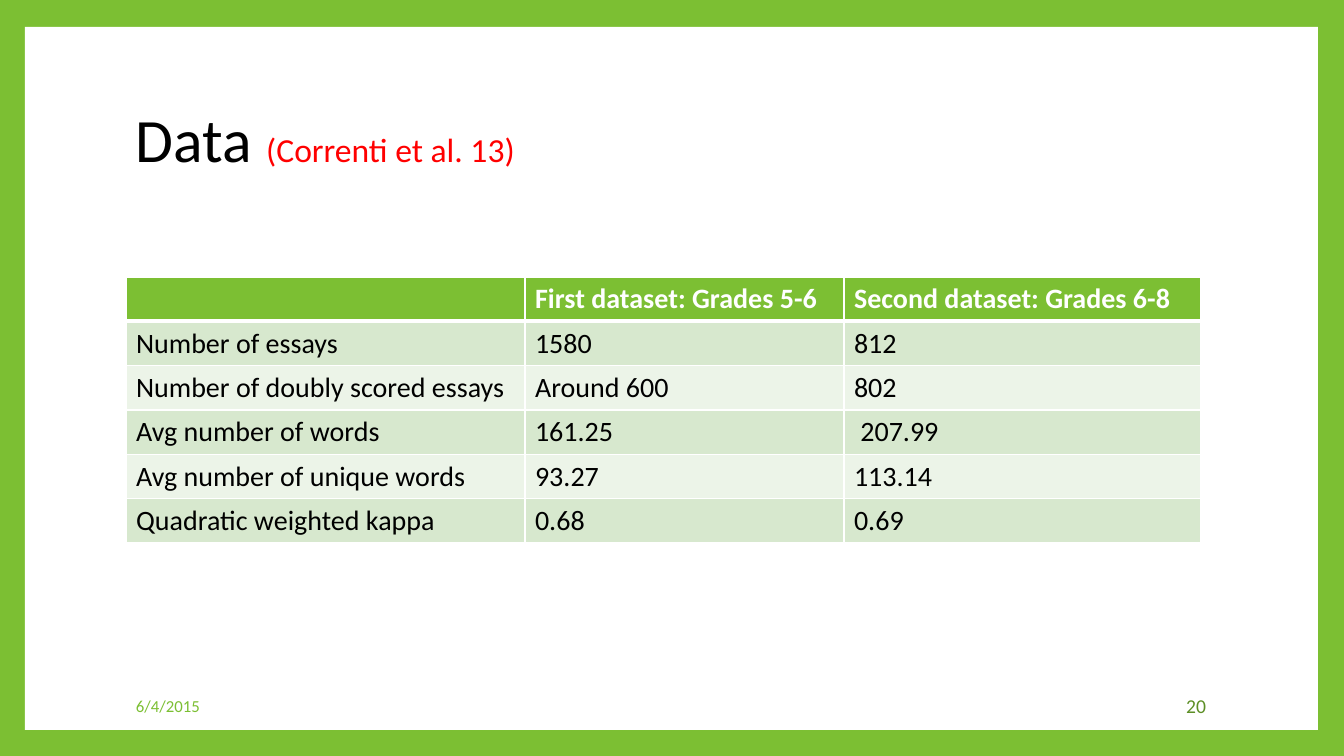
from dataclasses import dataclass

from lxml import etree
from pptx import Presentation
from pptx.dml.color import RGBColor
from pptx.enum.shapes import MSO_SHAPE
from pptx.enum.text import MSO_ANCHOR, PP_ALIGN
from pptx.oxml.ns import qn
from pptx.util import Emu, Pt

RECTANGLE = MSO_SHAPE.RECTANGLE
MIDDLE = MSO_ANCHOR.MIDDLE
LEFT, RIGHT = PP_ALIGN.LEFT, PP_ALIGN.RIGHT
EMU_PER_PX = 914400 / 100.8


@dataclass(frozen=True)
class Theme:
    font: str = "Calibri"
    green: str = "7CBF33"
    dark_green: str = "5D8F26"
    band_dark: str = "D7E8CE"
    band_light: str = "ECF4E8"
    white: str = "FFFFFF"
    black: str = "000000"
    red: str = "FF0000"
    title_size: int = 44
    citation_size: int = 24
    table_size: int = 20
    date_size: int = 12
    number_size: int = 14
    thin_rule: int = 1
    thick_rule: int = 3


THEME = Theme()

DATASETS = [
    ["", "First dataset: Grades 5-6", "Second dataset: Grades 6-8"],
    ["Number of essays", "1580", "812"],
    ["Number of doubly scored essays", "Around 600", "802"],
    ["Avg number of words", "161.25", " 207.99"],
    ["Avg number of unique words", "93.27", "113.14"],
    ["Quadratic weighted kappa", "0.68", "0.69"],
]
COLUMN_WIDTHS = [399, 319, 357]


def px(length):
    return Emu(round(length * EMU_PER_PX))


def rgb(value):
    return RGBColor.from_string(value)


def style(font, size, color, bold=False):
    font.name = THEME.font
    font.size = Pt(size)
    font.color.rgb = rgb(color)
    font.bold = bold


def add_text(slide, box, align=LEFT):
    """Add a vertically centred text box and return its paragraph."""
    frame = slide.shapes.add_textbox(*map(px, box)).text_frame
    frame.word_wrap = True
    frame.vertical_anchor = MIDDLE
    paragraph = frame.paragraphs[0]
    paragraph.alignment = align
    return paragraph


def add_frame(slide, box):
    """White panel on a green background."""
    background = slide.background.fill
    background.solid()
    background.fore_color.rgb = rgb(THEME.green)
    panel = slide.shapes.add_shape(RECTANGLE, *map(px, box))
    panel.shadow.inherit = False
    panel.fill.solid()
    panel.fill.fore_color.rgb = rgb(THEME.white)
    panel.line.fill.background()


def add_title(slide, box):
    title = add_text(slide, box)
    title.line_spacing = 0.9
    for words, size, color in (
        ("Data ", THEME.title_size, THEME.black),
        ("(Correnti et al. 13)", THEME.citation_size, THEME.red),
    ):
        run = title.add_run()
        run.text = words
        style(run.font, size, color)


def set_borders(cell, top, bottom):
    """White rules on all four sides, placed ahead of the cell's fill."""
    properties = cell._tc.get_or_add_tcPr()
    widths = {"lnL": THEME.thin_rule, "lnR": THEME.thin_rule, "lnT": top, "lnB": bottom}
    for position, (side, width) in enumerate(widths.items()):
        rule = etree.Element(qn(f"a:{side}"), w=str(Pt(width)))
        fill = etree.SubElement(rule, qn("a:solidFill"))
        etree.SubElement(fill, qn("a:srgbClr"), val=THEME.white)
        properties.insert(position, rule)


def add_dataset_table(slide, box):
    table = slide.shapes.add_table(
        len(DATASETS), len(COLUMN_WIDTHS), *map(px, box)
    ).table
    for column, width in zip(table.columns, COLUMN_WIDTHS):
        column.width = px(width)
    for index, values in enumerate(DATASETS):
        is_header = index == 0
        if is_header:
            fill, color = THEME.green, THEME.white
        else:
            fill = THEME.band_dark if index % 2 else THEME.band_light
            color = THEME.black
        top = THEME.thick_rule if index == 1 else THEME.thin_rule
        bottom = THEME.thick_rule if is_header else THEME.thin_rule
        for column, value in enumerate(values):
            cell = table.cell(index, column)
            cell.text = value
            cell.fill.solid()
            cell.fill.fore_color.rgb = rgb(fill)
            style(cell.text_frame.paragraphs[0].font, THEME.table_size, color, is_header)
            set_borders(cell, top, bottom)


def add_footer(slide, box):
    """Date at the left edge, slide number at the right edge."""
    left, top, width, height = box
    date_width, number_width = 257, 189
    date = add_text(slide, (left, top, date_width, height))
    date.text = "6/4/2015"
    style(date.font, THEME.date_size, THEME.green)
    number_left = left + width - number_width
    number = add_text(slide, (number_left, top, number_width, height), RIGHT)
    number.text = "20"
    style(number.font, THEME.number_size, THEME.dark_green)


def build_data_slide(presentation, box):
    left, top, width, height = box
    slide = presentation.slides.add_slide(presentation.slide_layouts[6])
    content_left = left + 126
    add_frame(slide, (left + 25, top + 27, width - 51, height - 53))
    add_title(slide, (content_left, top + 68, 1089, 149))
    add_footer(slide, (content_left, top + 686, 1090, 40))
    add_dataset_table(slide, (content_left, top + 277, sum(COLUMN_WIDTHS), 266))


def main():
    presentation = Presentation()
    width, height = 1344, 756
    presentation.slide_width, presentation.slide_height = px(width), px(height)
    build_data_slide(presentation, (0, 0, width, height))
    presentation.save("out.pptx")


if __name__ == "__main__":
    main()
